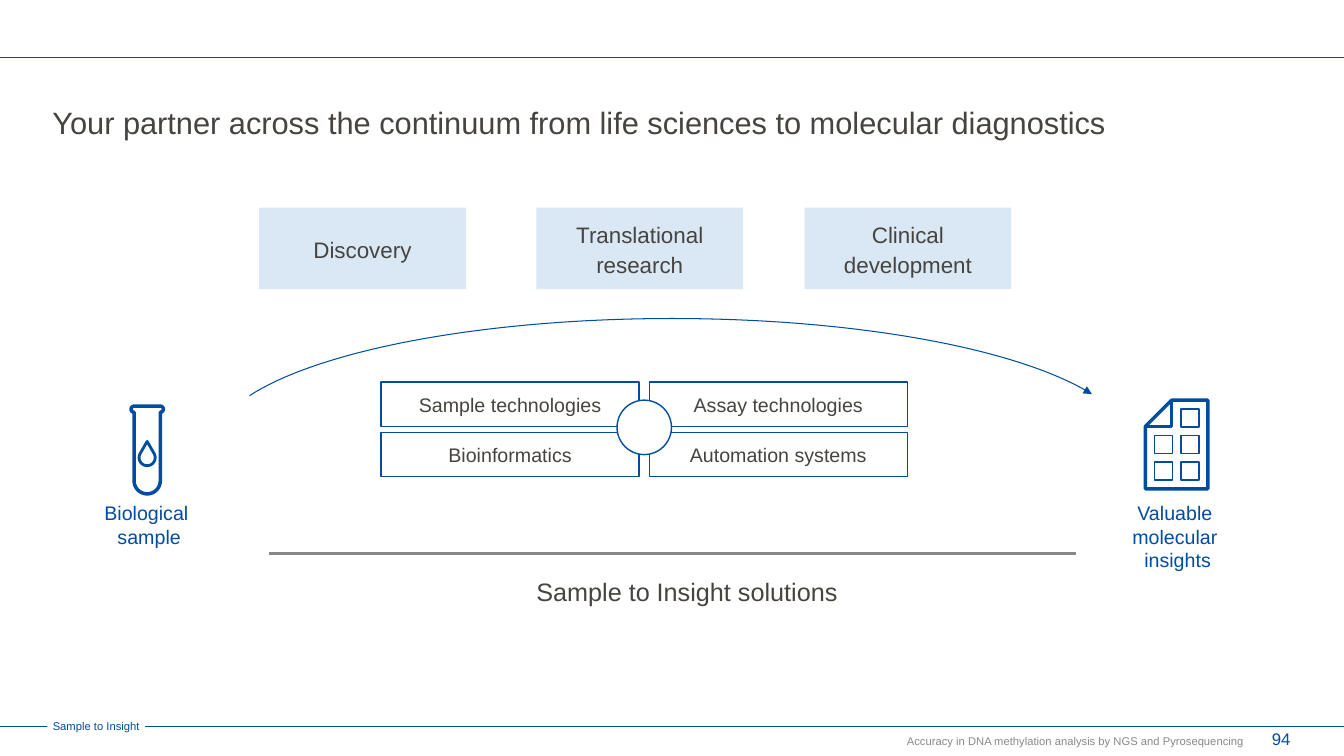
from math import cos, radians, sin

from lxml import etree
from pptx import Presentation
from pptx import util as u
from pptx.dml.color import RGBColor
from pptx.enum import shapes, text
from pptx.oxml import ns

BLUE = RGBColor(0x00, 0x4D, 0x9F)
PALE = RGBColor(0xDA, 0xE8, 0xF6)
INK = RGBColor(0x47, 0x44, 0x3F)
GREY = RGBColor(0x8A, 0x88, 0x86)
WHITE = RGBColor(0xFF, 0xFF, 0xFF)

WIDTH, HEIGHT = 13.33, 7.5
LEFT, CENTER, RIGHT = text.PP_ALIGN.LEFT, text.PP_ALIGN.CENTER, text.PP_ALIGN.RIGHT
TOP, MIDDLE = text.MSO_ANCHOR.TOP, text.MSO_ANCHOR.MIDDLE
RECT, OVAL, ARC = (shapes.MSO_SHAPE.RECTANGLE, shapes.MSO_SHAPE.OVAL,
                   shapes.MSO_SHAPE.ARC)

TITLE = "Your partner across the continuum from life sciences to molecular diagnostics"
STAGES = [("Discovery", 2.57), ("Translational research", 5.32),
          ("Clinical development", 7.98)]
TECHNOLOGIES = [["Sample technologies", "Assay technologies"],
                ["Bioinformatics", "Automation systems"]]
SAMPLE = "Biological \vsample"
INSIGHTS = "Valuable \vmolecular \vinsights"
SOLUTIONS = "Sample to Insight solutions"
SLOGAN = "Sample to Insight"
FOOTER = "Accuracy in DNA methylation analysis by NGS and Pyrosequencing"
PAGE_NUMBER = "94"

deck = Presentation()
deck.slide_width, deck.slide_height = u.Inches(WIDTH), u.Inches(HEIGHT)
page = deck.slides.add_slide(deck.slide_layouts[6])


def inches(values):
    return [u.Inches(value) for value in values]


def paint(shape, fill=None, line=None, weight=1):
    shape.shadow.inherit = False
    if fill is None:
        shape.fill.background()
    else:
        shape.fill.solid()
        shape.fill.fore_color.rgb = fill
    if line is None:
        shape.line.fill.background()
    else:
        shape.line.color.rgb = line
        shape.line.width = u.Pt(weight)
    return shape


def add_figure(kind, at, **style):
    return paint(page.shapes.add_shape(kind, *inches(at)), **style)


def write(box, words, size, color, align=CENTER, anchor=MIDDLE,
          insets=(0, 0), spacing=1.0, wrap=True):
    frame = box.text_frame
    frame.word_wrap = wrap
    frame.vertical_anchor = anchor
    frame.margin_left = frame.margin_right = u.Inches(insets[0])
    frame.margin_top = frame.margin_bottom = u.Inches(insets[1])
    para = frame.paragraphs[0]
    para.text = words
    para.alignment = align
    para.line_spacing = spacing
    para.font.name = "Arial"
    para.font.size = u.Pt(size)
    para.font.color.rgb = color


def add_label(at, *words, **style):
    write(page.shapes.add_textbox(*inches(at)), *words, **style)


def add_rule(left, right, y, color, weight):
    rule = page.shapes.add_connector(shapes.MSO_CONNECTOR.STRAIGHT,
                                     *inches((left, y, right, y)))
    rule.line.color.rgb = color
    rule.line.width = u.Pt(weight)
    etree.SubElement(rule._element.spPr, ns.qn("a:effectLst"))


def add_outline(points, weight, closed=True):
    start, *others = [inches(point) for point in points]
    builder = page.shapes.build_freeform(*start)
    builder.add_line_segments(others, close=closed)
    paint(builder.convert_to_shape(), line=BLUE, weight=weight)


def curve(x, y, radius, start, end, steps=24):
    angles = [radians(start + (end - start) * i / steps) for i in range(steps + 1)]
    return [(x + radius * cos(a), y + radius * sin(a)) for a in angles]


def add_tube(x, top):
    half, lip = 0.13, 0.03
    rim = top + lip
    add_outline(curve(x - half, rim, lip, 90, 270)
                + curve(x + half, rim, lip, -90, 90)
                + curve(x, top + 0.74, half, 0, 180), 2.5)
    add_outline([(x, top + 0.35)] + curve(x, top + 0.51, 0.08, -28, 208), 2)


def add_report(left, top):
    width, height, fold = 0.62, 0.88, 0.26
    right, bottom = left + width, top + height
    corner = [(left, top + fold), (left + fold, top)]
    add_outline(corner + [(right, top), (right, bottom), (left, bottom)], 2.4)
    add_outline(corner[:1] + [(left + fold, top + fold)] + corner[1:], 2.4, False)
    side, pitch = 0.18, 0.26
    for row in range(3):
        for column in range(2):
            if row or column:
                add_figure(RECT, (left + 0.09 + column * pitch,
                                  top + 0.09 + row * pitch, side, side),
                           line=BLUE, weight=1.3)


def build():
    add_rule(0, WIDTH, 7.21, BLUE, 0.75)
    write(add_figure(RECT, (0.47, 7.1, 0.97, 0.2), fill=WHITE), SLOGAN, 8, BLUE)
    add_rule(0, WIDTH, 0.57, BLUE, 0.75)
    add_label((0.52, 1.07, 12.28, 0.35), TITLE, 22, INK,
              align=LEFT, anchor=TOP, spacing=0.9)

    for row, names in enumerate(TECHNOLOGIES):
        for column, name in enumerate(names):
            cell = (3.78 + column * 2.66, 3.79 + row * 0.5, 2.56, 0.44)
            write(add_figure(RECT, cell, fill=WHITE, line=BLUE), name, 14, INK)
    add_figure(OVAL, (6.12, 3.97, 0.54, 0.54), fill=WHITE, line=BLUE)

    for name, left in STAGES:
        stage = add_figure(RECT, (left, 2.06, 2.05, 0.81), fill=PALE)
        write(stage, name, 16, INK, insets=(0.12, 0.08), spacing=1.1)

    journey = add_figure(ARC, (2.11, 3.16, 9.11, 2.52), line=BLUE, weight=0.75)
    journey.adjustments[0], journey.adjustments[1] = 112.04, 211.81
    etree.SubElement(journey.line._get_or_add_ln(), ns.qn("a:tailEnd"), type="triangle")

    add_rule(2.67, 10.67, 5.49, GREY, 2.25)
    add_label((5.32, 5.69, 3.2, 0.4), SOLUTIONS, 18, INK,
              align=LEFT, anchor=TOP, spacing=1.1)

    add_tube(1.46, 4.03)
    add_report(11.36, 3.97)
    add_label((0.93, 4.92, 1.1, 0.57), SAMPLE, 14, BLUE,
              anchor=TOP, insets=(0.1, 0.05), wrap=False)
    add_label((10.48, 4.92, 2.4, 0.81), INSIGHTS, 14, BLUE,
              anchor=TOP, insets=(0.1, 0.05))

    add_label((4.78, 7.29, 7.56, 0.13), FOOTER, 8, GREY, align=RIGHT)
    add_label((12.45, 7.24, 0.35, 0.18), PAGE_NUMBER, 12, BLUE, align=RIGHT)
    deck.save("out.pptx")


if __name__ == "__main__":
    build()
